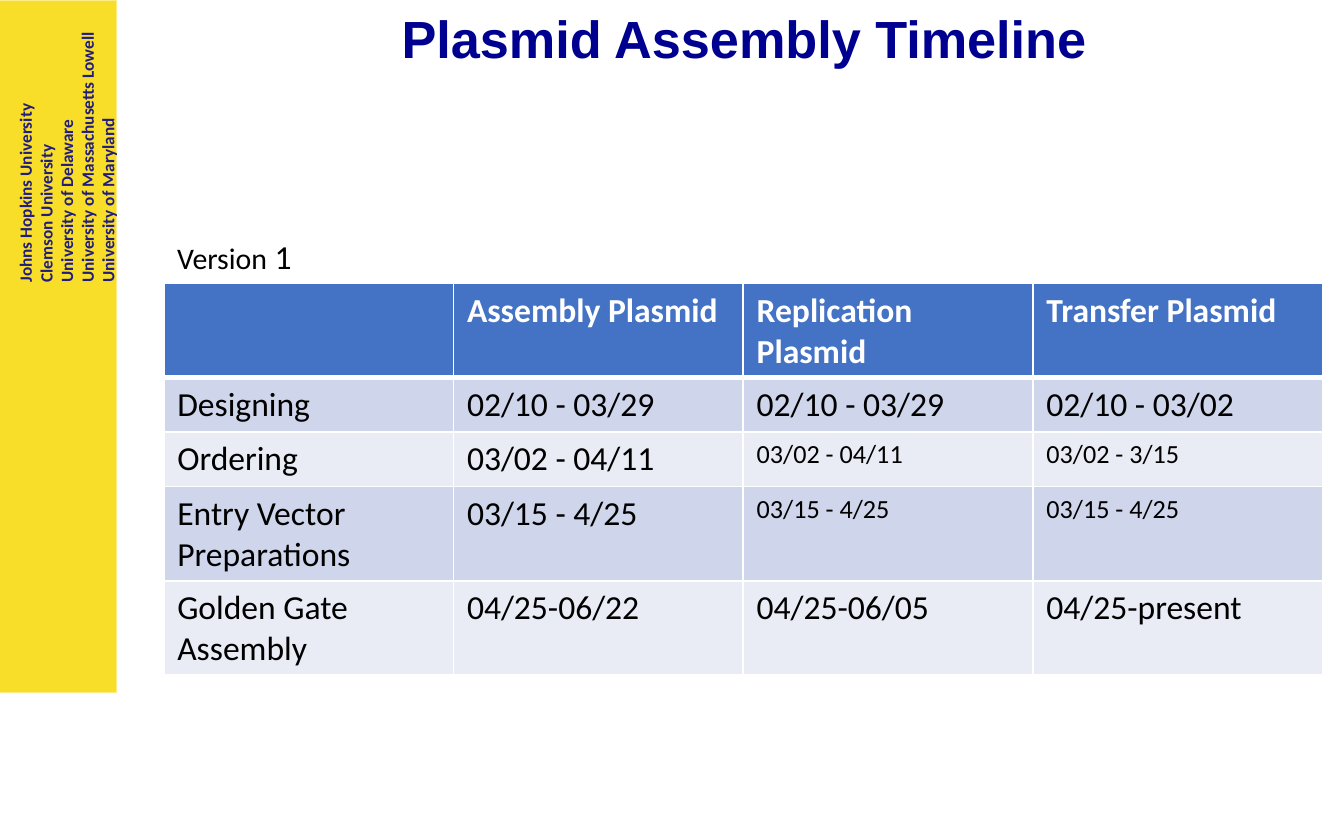
from dataclasses import dataclass
from typing import Any

from lxml.etree import SubElement
from pptx import Presentation
from pptx.dml.color import RGBColor
from pptx.enum.shapes import MSO_SHAPE
from pptx.enum.text import MSO_AUTO_SIZE, PP_ALIGN
from pptx.oxml.ns import qn
from pptx.util import Pt

GOLD = RGBColor(0xF8, 0xDE, 0x28)
CREAM = RGBColor(0xFB, 0xEC, 0x85)
INDIGO = RGBColor(0x21, 0x1D, 0x7D)
NAVY = RGBColor(0x00, 0x00, 0x90)
BLUE = RGBColor(0x44, 0x72, 0xC4)
MIST = RGBColor(0xCF, 0xD5, 0xEA)
PALE = RGBColor(0xE9, 0xEB, 0xF5)
WHITE = RGBColor(0xFF, 0xFF, 0xFF)
BLACK = RGBColor(0x00, 0x00, 0x00)

HEAD = {"name": "Arial", "size": Pt(28), "bold": True}
LABEL = {"name": "Calibri", "size": Pt(16), "bold": False}
SCHOOL = {"name": "Calibri", "size": Pt(9.2), "bold": True}
BODY = {"name": "Calibri", "size": Pt(18), "bold": False}
SMALL = BODY | {"size": Pt(14)}
TOP = BODY | {"bold": True}

SCHOOLS = [
    "Johns Hopkins University",
    "Clemson University",
    "University of Delaware",
    "University of Massachusetts Lowell",
    "University of Maryland",
]
ROWS = [
    ["", "Assembly Plasmid", "Replication Plasmid", "Transfer Plasmid"],
    ["Designing", "02/10 - 03/29", "02/10 - 03/29", "02/10 - 03/02"],
    ["Ordering", "03/02 - 04/11", "03/02 - 04/11", "03/02 - 3/15"],
    ["Entry Vector Preparations", "03/15 - 4/25", "03/15 - 4/25", "03/15 - 4/25"],
    ["Golden Gate Assembly", "04/25-06/22", "04/25-06/05", "04/25-present"],
]
COL = 155.2
ROW = 29.2


@dataclass
class Box:
    left: float
    top: float
    width: float
    height: float

    def size(self) -> list[Pt]:
        return [Pt(n) for n in (self.left, self.top, self.width, self.height)]


@dataclass
class Run:
    text: str
    form: dict[str, Any]
    color: RGBColor


def write(para: Any, runs: list[Run]) -> None:
    for item in runs:
        run = para.add_run()
        run.text = item.text
        for key, value in item.form.items():
            setattr(run.font, key, value)
        run.font.color.rgb = item.color


def panel(slide: Any, box: Box) -> Any:
    shape = slide.shapes.add_shape(MSO_SHAPE.RECTANGLE, *box.size())
    shape.shadow.inherit = False
    shape.fill.solid()
    shape.fill.fore_color.rgb = GOLD
    return shape


def label(slide: Any, box: Box, runs: list[Run], align: PP_ALIGN) -> None:
    frame = slide.shapes.add_textbox(*box.size()).text_frame
    frame.word_wrap = True
    frame.auto_size = MSO_AUTO_SIZE.SHAPE_TO_FIT_TEXT
    frame.paragraphs[0].alignment = align
    write(frame.paragraphs[0], runs)


def side(slide: Any) -> None:
    band = panel(slide, Box(0, 0, 62.6, 370.8))
    band.line.color.rgb = CREAM
    band.line.width = Pt(0.5)
    strip = panel(slide, Box(-43.2, 56.2, 149.8, 54.7))
    strip.line.fill.background()
    strip.rotation = 270
    frame = strip.text_frame
    frame.word_wrap = False
    frame.auto_size = MSO_AUTO_SIZE.SHAPE_TO_FIT_TEXT
    frame.vertical_anchor = 1
    for i, name in enumerate(SCHOOLS):
        para = frame.add_paragraph() if i else frame.paragraphs[0]
        para.alignment = PP_ALIGN.LEFT
        write(para, [Run(name, SCHOOL, INDIGO)])


def edge(cell: Any, row: int) -> None:
    props = cell._tc.get_or_add_tcPr()
    thick = {"lnB": row == 0, "lnT": row == 1}
    for tag in ("lnL", "lnR", "lnT", "lnB"):
        width = Pt(3 if thick.get(tag) else 1)
        line = SubElement(props, qn(f"a:{tag}"), w=str(width))
        fill = SubElement(line, qn("a:solidFill"))
        SubElement(fill, qn("a:srgbClr"), val=str(WHITE))


def grid(slide: Any) -> None:
    box = Box(87.8, 151.9, COL * len(ROWS[0]), ROW * len(ROWS))
    table = slide.shapes.add_table(len(ROWS), len(ROWS[0]), *box.size()).table
    for col in table.columns:
        col.width = Pt(COL)
    for r, texts in enumerate(ROWS):
        table.rows[r].height = Pt(ROW)
        shade = (MIST if r % 2 else PALE) if r else BLUE
        for c, text in enumerate(texts):
            cell = table.cell(r, c)
            edge(cell, r)
            cell.fill.solid()
            cell.fill.fore_color.rgb = shade
            form = SMALL if r in (2, 3) and c > 1 else BODY
            if text:
                ink = BLACK if r else WHITE
                write(cell.text_frame.paragraphs[0],
                      [Run(text, form if r else TOP, ink)])


def main() -> None:
    deck = Presentation()
    deck.slide_width, deck.slide_height = Pt(720), Pt(450)
    slide = deck.slides.add_slide(deck.slide_layouts[6])
    side(slide)
    label(slide, Box(185, 0, 427, 41),
          [Run("Plasmid Assembly Timeline", HEAD, NAVY)], PP_ALIGN.CENTER)
    grid(slide)
    label(slide, Box(87.8, 123.1, 118, 28.8),
          [Run("Version", LABEL, BLACK), Run(" 1", BODY, BLACK)], PP_ALIGN.LEFT)
    deck.save("out.pptx")


if __name__ == "__main__":
    main()
